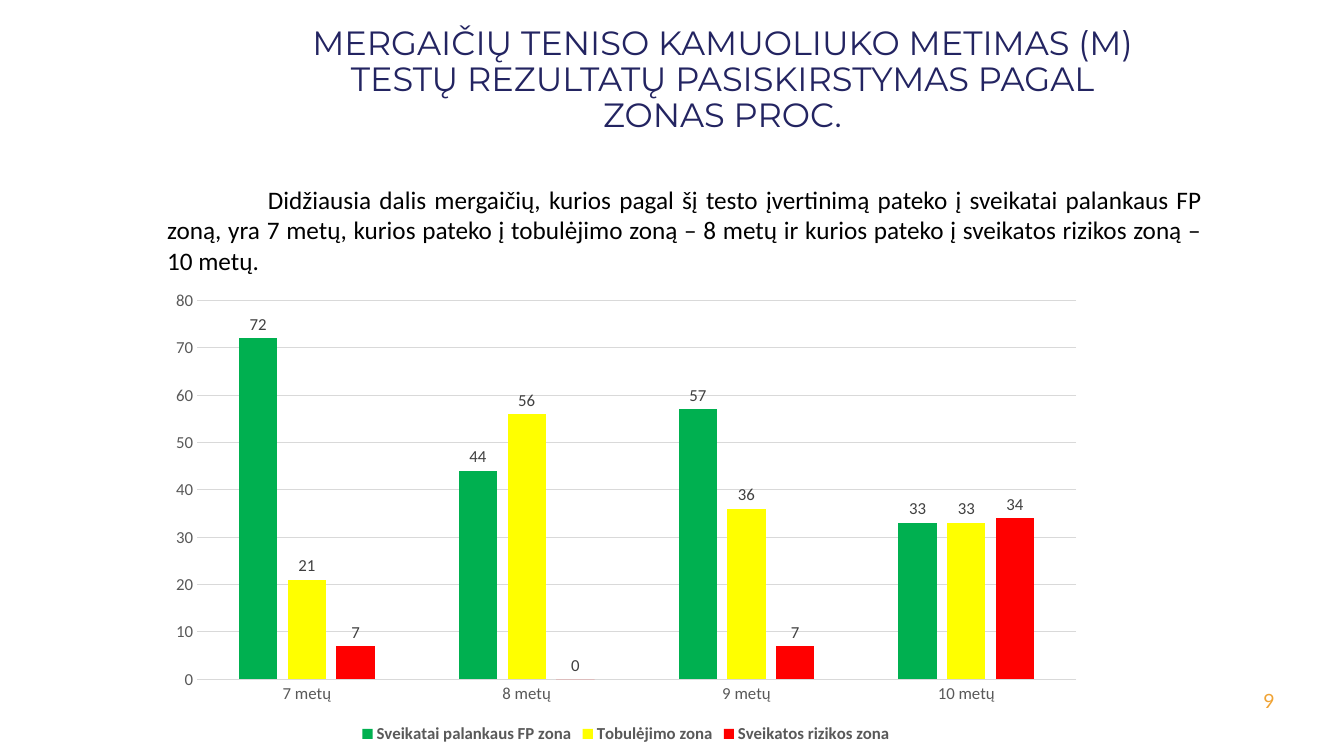
from pptx import Presentation
from pptx.chart.data import CategoryChartData
from pptx.dml.color import RGBColor
from pptx.enum.chart import XL_CHART_TYPE, XL_LABEL_POSITION, XL_LEGEND_POSITION, XL_TICK_MARK
from pptx.enum.text import MSO_ANCHOR, PP_ALIGN
from pptx.util import Inches, Pt

COLUMNS = XL_CHART_TYPE.COLUMN_CLUSTERED
OUTSIDE_END = XL_LABEL_POSITION.OUTSIDE_END
LEGEND_BOTTOM = XL_LEGEND_POSITION.BOTTOM
NO_TICK = XL_TICK_MARK.NONE
TOP = MSO_ANCHOR.TOP
CENTER, RIGHT, JUSTIFY = PP_ALIGN.CENTER, PP_ALIGN.RIGHT, PP_ALIGN.JUSTIFY

COLORS = {
    "title": "232461", "text": "000000", "number": "F0A334",
    "axis": "595959", "label": "404040", "grid": "D9D9D9",
    "healthy": "00B050", "improving": "FFFF00", "risk": "FF0000",
}
LEFT = 1.56


def style_font(font, name, size, color, bold=False):
    font.name = name
    font.size = Pt(size)
    font.bold = bold
    font.color.rgb = RGBColor.from_string(COLORS[color])


def write_text(box, text, align, name, size, color):
    frame = box.text_frame
    frame.word_wrap = True
    frame.vertical_anchor = TOP
    frame.text = text
    paragraph = frame.paragraphs[0]
    paragraph.alignment = align
    style_font(paragraph.runs[0].font, name, size, color)
    return paragraph


prs = Presentation()
prs.slide_width, prs.slide_height = Inches(13.33), Inches(7.5)
slide = prs.slides.add_slide(prs.slide_layouts[5])

title = slide.shapes.title
title.left, title.top = Inches(2.83), Inches(0.21)
title.width, title.height = Inches(8.67), Inches(1.38)
heading = write_text(
    title,
    "MERGAIČIŲ TENISO KAMUOLIUKO METIMAS (M) TESTŲ REZULTATŲ PASISKIRSTYMAS PAGAL ZONAS PROC.",
    CENTER, "Montserrat", 24, "title")
heading.line_spacing = 0.9

page_number = slide.shapes.add_textbox(Inches(12.22), Inches(6.79), Inches(0.52), Inches(0.4))
write_text(page_number, "9", RIGHT, "Lato", 14, "number")

zones = [
    ("Sveikatai palankaus FP zona", (72, 44, 57, 33), "healthy"),
    ("Tobulėjimo zona", (21, 56, 36, 33), "improving"),
    ("Sveikatos rizikos zona", (7, 0, 7, 34), "risk"),
]
results = CategoryChartData()
results.categories = [f"{age} metų" for age in range(7, 11)]
for zone, shares, _ in zones:
    results.add_series(zone, shares)

chart = slide.shapes.add_chart(
    COLUMNS, Inches(LEFT), Inches(2.79), Inches(9.3), Inches(4.63), results).chart
style_font(chart.font, "Calibri", 10, "text")
chart.has_title = False
chart.has_legend = True
chart.legend.position = LEGEND_BOTTOM
chart.legend.include_in_layout = False
style_font(chart.legend.font, "Calibri", 12, "axis", bold=True)

ages, percent = chart.category_axis, chart.value_axis
for axis in (ages, percent):
    axis.major_tick_mark = axis.minor_tick_mark = NO_TICK
    style_font(axis.tick_labels.font, "Calibri", 12, "axis")
percent.minimum_scale, percent.maximum_scale, percent.major_unit = 0, 80, 10
percent.format.line.fill.background()
for line in (ages.format.line, percent.major_gridlines.format.line):
    line.width = Pt(0.75)
    line.color.rgb = RGBColor.from_string(COLORS["grid"])

plot = chart.plots[0]
plot.gap_width, plot.overlap = 219, -27
plot.vary_by_categories = False
for series, (_, _, color) in zip(plot.series, zones):
    series.format.fill.solid()
    series.format.fill.fore_color.rgb = RGBColor.from_string(COLORS[color])
    labels = series.data_labels
    labels.show_value = True
    labels.position = OUTSIDE_END
    style_font(labels.font, "Calibri", 12, "label")

summary = slide.shapes.add_textbox(Inches(LEFT), Inches(1.78), Inches(10.46), Inches(1.01))
summary_text = write_text(
    summary,
    "Didžiausia dalis mergaičių, kurios pagal šį testo įvertinimą pateko į sveikatai palankaus FP zoną, "
    "yra 7 metų, kurios pateko į tobulėjimo zoną – 8 metų ir kurios pateko į sveikatos rizikos zoną – 10 metų.",
    JUSTIFY, "Calibri", 18, "text")
summary_text._p.get_or_add_pPr().set("indent", str(Inches(1)))

prs.save("out.pptx")
